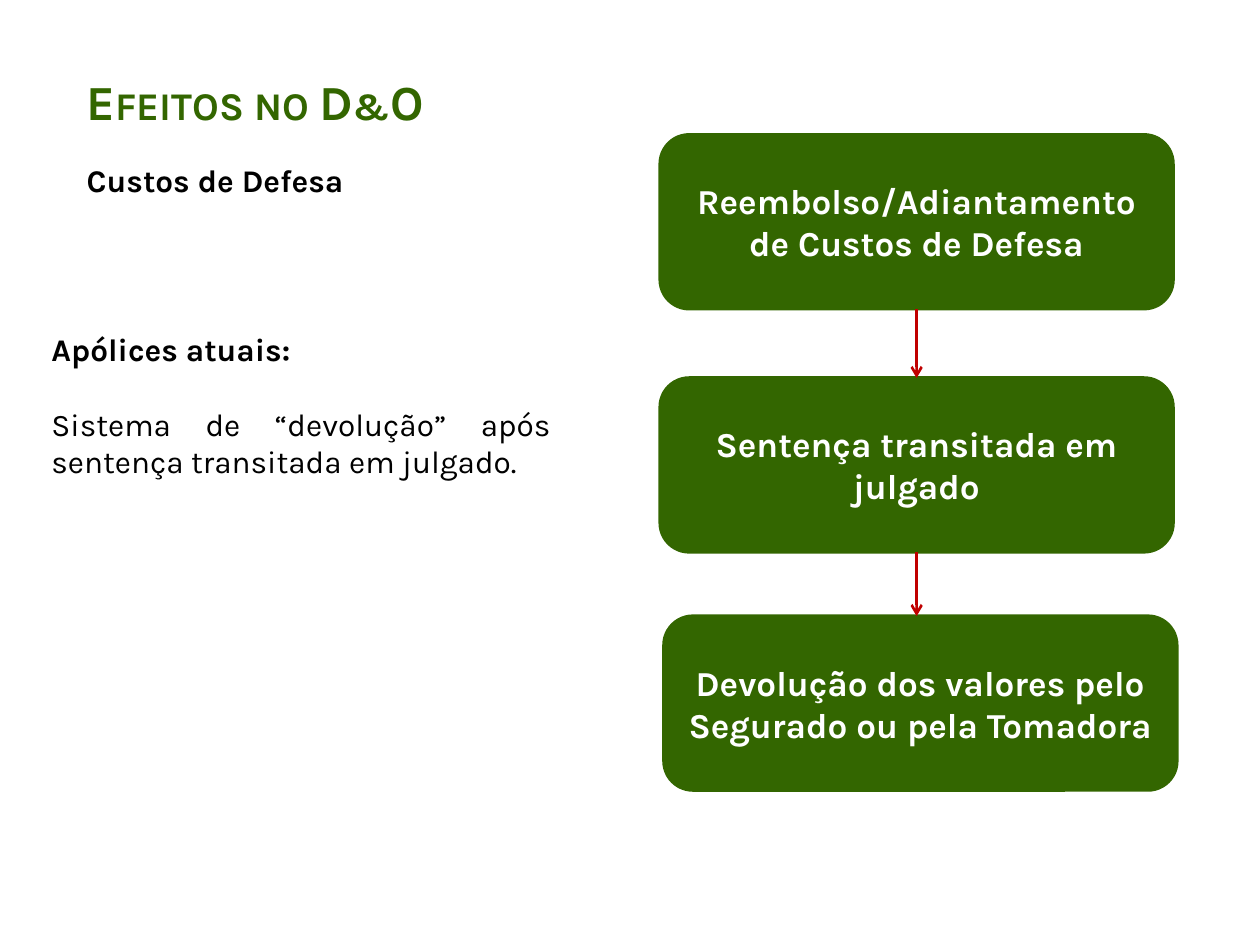
from pptx import Presentation
from pptx.dml.color import RGBColor
from pptx.enum.shapes import MSO_CONNECTOR, MSO_SHAPE
from pptx.enum.text import MSO_ANCHOR, PP_ALIGN
from pptx.oxml.ns import qn
from pptx.util import Inches, Pt
from lxml import etree

GREEN = RGBColor(0x33, 0x66, 0x00)
RED = RGBColor(0xC0, 0x00, 0x00)
BLACK = RGBColor(0x00, 0x00, 0x00)
WHITE = RGBColor(0xFF, 0xFF, 0xFF)
LEFT, CENTER, JUSTIFY = PP_ALIGN.LEFT, PP_ALIGN.CENTER, PP_ALIGN.JUSTIFY
MIDDLE = MSO_ANCHOR.MIDDLE
ROUNDED = MSO_SHAPE.ROUNDED_RECTANGLE
STRAIGHT = MSO_CONNECTOR.STRAIGHT

WIDTH, HEIGHT = Inches(10), Inches(7.5)
COLS, ROWS = 100, 75
BOX_W, BOX_H = 40.7, 13.8
STEPS = [
    (52.4, 10.7, "Reembolso/Adiantamento de Custos de Defesa"),
    (52.4, 30, "Sentença transitada em julgado"),
    (52.7, 48.9, "Devolução dos valores pelo Segurado ou pela Tomadora"),
]
ARROW_COL = STEPS[0][0] + BOX_W / 2


def x(cols):
    return round(WIDTH * cols / COLS)


def y(rows):
    return round(HEIGHT * rows / ROWS)


def write(p, text, align, size, color, bold=True):
    p.alignment = align
    r = p.add_run()
    r.text = text
    r.font.color.rgb = color
    formats = {"name": "Karla", "size": Pt(size), "bold": bold}
    for name, value in formats.items():
        setattr(r.font, name, value)
    return r


def add_text(s, col, row, cols, rows):
    tf = s.shapes.add_textbox(x(col), y(row), x(cols), y(rows)).text_frame
    tf.word_wrap = True
    return tf


def add_step(s, col, row, text):
    sp = s.shapes.add_shape(ROUNDED, x(col), y(row), x(BOX_W), y(BOX_H))
    sp.shadow.inherit = False
    sp.fill.solid()
    sp.fill.fore_color.rgb = GREEN
    sp.line.color.rgb = GREEN
    sp.line.width = Pt(2)
    tf = sp.text_frame
    tf.word_wrap = True
    tf.vertical_anchor = MIDDLE
    write(tf.paragraphs[0], text, CENTER, 20, WHITE)


def add_arrow(s, col, top, bottom):
    c = s.shapes.add_connector(STRAIGHT, x(col), y(top), x(col), y(bottom))
    c.line.color.rgb = RED
    c.line.width = Pt(1.5)
    etree.SubElement(c.line._get_or_add_ln(), qn("a:tailEnd"), type="arrow")
    etree.SubElement(c._element.spPr, qn("a:effectLst"))


def main():
    prs = Presentation()
    prs.slide_width, prs.slide_height = WIDTH, HEIGHT
    s = prs.slides.add_slide(prs.slide_layouts[6])

    tf = add_text(s, 3.1, 25.7, 41.6, 16.2)
    write(tf.paragraphs[0], "Apólices atuais:", JUSTIFY, 18, BLACK)
    p = tf.add_paragraph()
    p.space_before = Pt(21)
    write(p, "Sistema de “devolução” após sentença transitada em julgado.",
          JUSTIFY, 18, BLACK, bold=False)

    for col, row, text in STEPS:
        add_step(s, col, row, text)
    for (_, row, _), (_, next_row, _) in zip(STEPS, STEPS[1:]):
        add_arrow(s, ARROW_COL, row + BOX_H, next_row)

    tf = add_text(s, 5.9, 5.2, 89, 5.7)
    r = write(tf.paragraphs[0], "Efeitos no D&O", LEFT, 28, GREEN)
    r.font._element.set("cap", "small")

    tf = add_text(s, 5.9, 12.3, 89, 10.1)
    write(tf.paragraphs[0], "Custos de Defesa", LEFT, 18, BLACK)

    prs.save("out.pptx")


if __name__ == "__main__":
    main()
